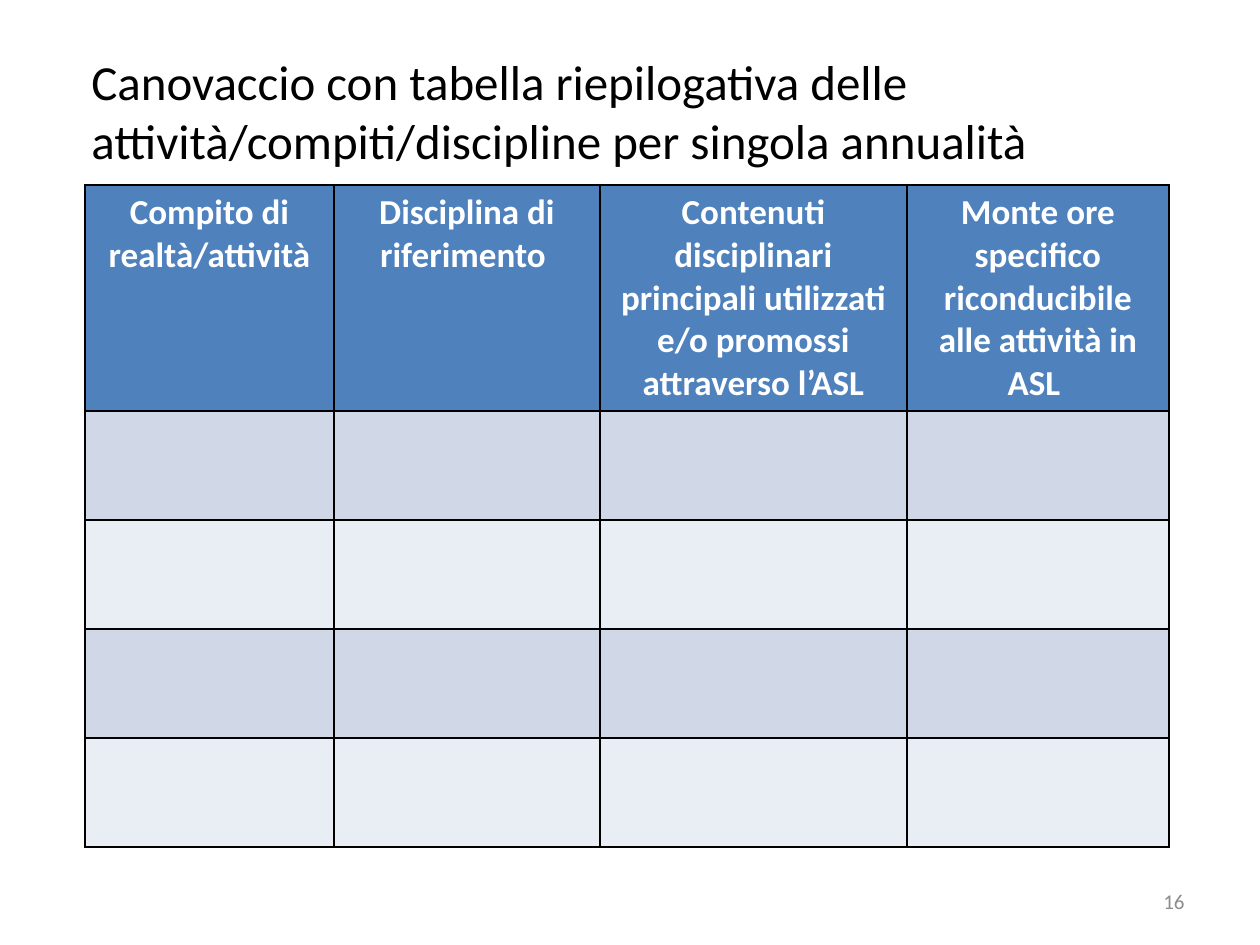
from dataclasses import dataclass

from lxml import etree
from pptx import Presentation
from pptx.dml.color import RGBColor
from pptx.enum.text import MSO_ANCHOR, PP_ALIGN
from pptx.oxml.ns import qn
from pptx.util import Emu, Pt

LEFT, CENTER, RIGHT = PP_ALIGN.LEFT, PP_ALIGN.CENTER, PP_ALIGN.RIGHT
TOP, MIDDLE = MSO_ANCHOR.TOP, MSO_ANCHOR.MIDDLE
EMU_PER_PX = 914400 // 126
BLANK_LAYOUT = 6


@dataclass(frozen=True)
class Theme:
    font: str = "Calibri"
    title_size: int = 28
    header_size: int = 20
    number_size: int = 12
    text: str = "000000"
    header_text: str = "FFFFFF"
    number_text: str = "8C8C8C"
    header_fill: str = "4F81BD"
    band_fills: tuple = ("D0D8E8", "E9EDF4")
    border: str = "000000"
    border_width: int = 1


THEME = Theme()

TITLE = ("Canovaccio con tabella riepilogativa delle "
         "attività/compiti/discipline per singola annualità")
HEADERS = (
    "Compito di realtà/attività",
    "Disciplina di riferimento ",
    "Contenuti disciplinari principali utilizzati e/o promossi attraverso l’ASL",
    "Monte ore specifico riconducibile alle attività in ASL ",
)
COLUMN_WIDTHS = (249, 266, 307, 262)
HEADER_HEIGHT = 204
BODY_HEIGHT = 109
BODY_ROWS = 4


def px(length):
    return Emu(length * EMU_PER_PX)


def write_text(frame, text, size, color, align, bold=False):
    frame.text = text
    para = frame.paragraphs[0]
    para.alignment = align
    for span in para.runs:
        span.font.name = THEME.font
        span.font.size = Pt(size)
        span.font.bold = bold
        span.font.color.rgb = RGBColor.from_string(color)


def add_text(page, area, text, size, color, align=LEFT, anchor=TOP):
    box = page.shapes.add_textbox(*map(px, area))
    box.text_frame.word_wrap = True
    box.text_frame.vertical_anchor = anchor
    write_text(box.text_frame, text, size, color, align)


def style_cell(cell, fill):
    cell.margin_left = cell.margin_right = px(9)
    cell.margin_top = cell.margin_bottom = px(6)
    properties = cell._tc.get_or_add_tcPr()
    for side in ("a:lnL", "a:lnR", "a:lnT", "a:lnB"):
        line = etree.SubElement(properties, qn(side), w=str(Pt(THEME.border_width)))
        solid = etree.SubElement(line, qn("a:solidFill"))
        etree.SubElement(solid, qn("a:srgbClr"), val=THEME.border)
    # The fill has to follow the borders in the cell properties
    cell.fill.solid()
    cell.fill.fore_color.rgb = RGBColor.from_string(fill)


def add_activity_table(page, left, top):
    heights = [HEADER_HEIGHT] + [BODY_HEIGHT] * BODY_ROWS
    table = page.shapes.add_table(
        len(heights), len(HEADERS), px(left), px(top),
        px(sum(COLUMN_WIDTHS)), px(sum(heights))).table
    for column, width in zip(table.columns, COLUMN_WIDTHS):
        column.width = px(width)
    for index, (row, height) in enumerate(zip(table.rows, heights)):
        row.height = px(height)
        fill = THEME.band_fills[(index - 1) % 2] if index else THEME.header_fill
        for cell in row.cells:
            style_cell(cell, fill)
    for cell, text in zip(table.rows[0].cells, HEADERS):
        write_text(cell.text_frame, text, THEME.header_size,
                   THEME.header_text, CENTER, bold=True)


def main():
    deck = Presentation()
    deck.slide_width, deck.slide_height = px(1260), px(945)
    page = deck.slides.add_slide(deck.slide_layouts[BLANK_LAYOUT])

    # Summary table
    add_activity_table(page, 85, 185)
    # Page number
    add_text(page, (903, 876, 294, 50), "16", THEME.number_size,
             THEME.number_text, RIGHT, MIDDLE)
    # Title
    add_text(page, (79, 45, 1090, 131), TITLE, THEME.title_size, THEME.text)

    deck.save("out.pptx")


if __name__ == "__main__":
    main()
